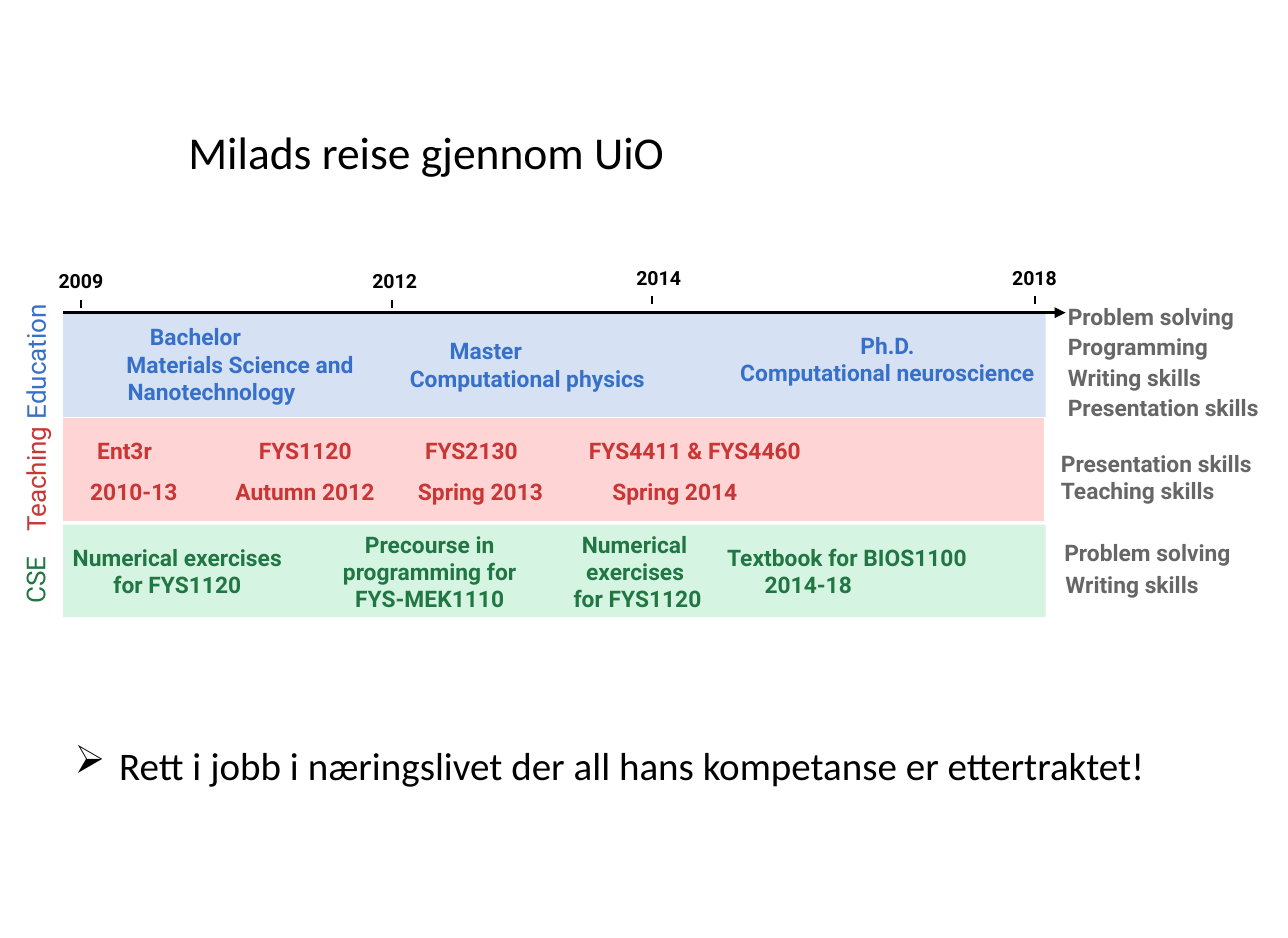
"""Build a slide with a timeline of studies, teaching and acquired skills."""
from lxml import etree
from pptx import Presentation
from pptx.dml.color import RGBColor
from pptx.enum.shapes import MSO_CONNECTOR, MSO_SHAPE
from pptx.enum.text import MSO_ANCHOR, MSO_AUTO_SIZE, PP_ALIGN
from pptx.oxml.ns import qn
from pptx.util import Inches, Pt

STRAIGHT, RECTANGLE = MSO_CONNECTOR.STRAIGHT, MSO_SHAPE.RECTANGLE
LEFT, CENTER = PP_ALIGN.LEFT, PP_ALIGN.CENTER
BOTTOM, MIDDLE = MSO_ANCHOR.BOTTOM, MSO_ANCHOR.MIDDLE
FIT = MSO_AUTO_SIZE.SHAPE_TO_FIT_TEXT
NO_STYLE = "{2D5ABB26-0587-4C30-8999-92F81FD0307C}"

THEME = {
    "colors": {"black": "000000", "education": "3670C8", "teaching": "C83636",
               "cse": "217744", "skills": "666666"},
    "bands": {"education": "D6E2F4", "teaching": "FFD4D4", "cse": "D6F4E2"},
    "label_font": "Roboto", "heading_font": "Calibri",
    "title": 28, "bullet": 24, "side": 16, "body": 14, "year": 12,
}

TITLE = ("Milads reise gjennom UiO", (1.51, 1.01, 4.31, 0.57))
CONCLUSION = ("Rett i jobb i næringslivet der all hans kompetanse er ettertraktet!",
              (0.54, 6.28, 9.43, 0.5))
BAND_LEFT, BAND_WIDTH, AXIS_Y, AXIS_END = 0.54, 8.39, 2.67, 9.1
BANDS = [("cse", 4.48, 0.79), ("education", AXIS_Y, 0.89)]
YEARS = [("2009", (0.5, 2.3, 0.51, 0.2), LEFT, 0.69),
         ("2012", (3.18, 2.3, 0.42, 0.2), LEFT, 3.35),
         ("2014", (5.35, 2.27, 0.55, 0.2), CENTER, 5.57),
         ("2018", (8.56, 2.27, 0.55, 0.2), CENTER, 8.84)]
TICK_OFFSET, TICK_HEIGHT = 0.26, 0.07
SIDE_LABELS = [("Education", "education", (-0.31, 2.84, 1.23, 0.27)),
               ("Teaching", "teaching", (-0.45, 3.66, 1.51, 0.27)),
               ("CSE", "cse", (0.07, 4.8, 0.46, 0.27))]

# Each entry: colour, box, alignment, line spacing, (text, margin, indent) paragraphs
ENTRIES = [
    ("education", (0.99, 2.76, 2.51, 0.71), LEFT, 1,
     [("Bachelor", 0.01, 0.28), ("Materials Science and", 0.01, 0.08),
      ("Nanotechnology", 0.1, 0)]),
    ("education", (3.49, 2.88, 2.21, 0.47), LEFT, 1,
     [("Master Computational physics", 0.01, 0.34)]),
    ("education", (6.23, 2.83, 2.7, 0.47), CENTER, 1,
     [("Ph.D.", 0, 0), ("Computational neuroscience", 0, 0)]),
    ("cse", (0.5, 4.64, 2.02, 0.47), CENTER, 1,
     [("Numerical exercises for FYS1120", 0.01, 0)]),
    ("cse", (2.82, 4.53, 1.69, 0.71), CENTER, 1,
     [("Precourse in programming for FYS-MEK1110", 0.01, 0)]),
    ("cse", (4.71, 4.53, 1.42, 0.71), CENTER, 1,
     [("Numerical exercises", 0.01, -0.01), ("for FYS1120", 0.01, 0.04)]),
    ("cse", (6.2, 4.64, 2.3, 0.47), LEFT, 1,
     [("Textbook for BIOS1100 2014-18", 0.33, -0.32)]),
    ("skills", (9.11, 2.56, 2.14, 1.05), LEFT, 1.11,
     [("Problem solving", 0.01, 0), ("Programming", 0.01, 0),
      ("Writing skills", 0.01, 0), ("Presentation skills", 0.01, 0)]),
    ("skills", (9.05, 3.84, 2.25, 0.47), LEFT, 1,
     [("Presentation skills", 0.01, 0), ("Teaching skills", 0.01, 0)]),
    ("skills", (9.08, 4.56, 2.14, 0.55), LEFT, 1.17,
     [("Problem solving", 0.01, 0), ("Writing skills", 0.02, 0)]),
]

TABLE_TOP = 3.57
COLUMNS = [1.28, 1.54, 1.32, 2.32, 1.92]
ROWS = [
    (0.4, BOTTOM, Pt(7.5), [("Ent3r", 0.29), ("FYS1120", 0.39), ("FYS2130", 0.27),
                            ("FYS4411 & FYS4460", 0.35), ("", 0)]),
    (0.48, MIDDLE, 1, [("2010-13", 0.23), ("Autumn 2012", 0.19), ("Spring 2013", 0.21),
                       ("Spring 2014", 0.55), ("", 0)]),
]


def rgb(name):
    """Return the theme colour with this name."""
    return RGBColor.from_string(THEME["colors"][name])


def style(p, size, color="black", font="label_font", bold=True, margin=0, indent=0):
    """Set the indents and font of a paragraph."""
    pPr = p._p.get_or_add_pPr()
    pPr.set("marL", str(Inches(margin)))
    pPr.set("indent", str(Inches(indent)))
    p.font.name, p.font.size = THEME[font], Pt(THEME[size])
    p.font.bold, p.font.color.rgb = bold, rgb(color)


def add_label(slide, box, paragraphs, size, color="black", align=LEFT, spacing=1, bold=True):
    """Add a text box without insets and return it."""
    sp = slide.shapes.add_textbox(*map(Inches, box))
    tf = sp.text_frame
    tf.word_wrap = True
    tf.margin_left = tf.margin_right = tf.margin_top = tf.margin_bottom = 0
    for i, (text, margin, indent) in enumerate(paragraphs):
        p = tf.add_paragraph() if i else tf.paragraphs[0]
        p.text, p.alignment, p.line_spacing = text, align, spacing
        style(p, size, color, bold=bold, margin=margin, indent=indent)
    return sp


def add_heading(slide, text, box, size, bullet=None):
    """Add an unwrapped line of large text, with an optional bullet."""
    tf = slide.shapes.add_textbox(*map(Inches, box)).text_frame
    tf.word_wrap, tf.auto_size = False, FIT
    p = tf.paragraphs[0]
    p.text = text
    hang = 0.38 if bullet else 0
    if bullet:
        etree.SubElement(p._p.get_or_add_pPr(), qn("a:buChar")).set("char", bullet)
    style(p, size, font="heading_font", bold=False, margin=hang, indent=-hang)


def add_line(slide, x1, y1, x2, y2, width, arrow=False):
    """Add a black line, with an optional arrowhead at its end."""
    line = slide.shapes.add_connector(STRAIGHT, *map(Inches, (x1, y1, x2, y2)))
    line.line.color.rgb, line.line.width = rgb("black"), Pt(width)
    if arrow:
        etree.SubElement(line.line._get_or_add_ln(), qn("a:tailEnd")).set("type", "triangle")
    etree.SubElement(line._element.spPr, qn("a:effectLst"))


def add_band(slide, name, top, height):
    """Add the coloured background of a timeline row."""
    sp = slide.shapes.add_shape(
        RECTANGLE, *map(Inches, (BAND_LEFT, top, BAND_WIDTH, height)))
    sp.shadow.inherit = False
    sp.fill.solid()
    sp.fill.fore_color.rgb = RGBColor.from_string(THEME["bands"][name])
    sp.line.fill.background()


def add_teaching_table(slide):
    """Add the table of courses taught."""
    height = sum(row[0] for row in ROWS)
    table = slide.shapes.add_table(
        len(ROWS), len(COLUMNS),
        *map(Inches, (BAND_LEFT, TABLE_TOP, BAND_WIDTH, height))).table
    table.first_row = table.horz_banding = False
    table._tbl.tblPr.find(qn("a:tableStyleId")).text = NO_STYLE
    for column, width in zip(table.columns, COLUMNS):
        column.width = Inches(width)
    for row, (height, anchor, spacing, cells) in zip(table.rows, ROWS):
        row.height = Inches(height)
        for cell, (text, margin) in zip(row.cells, cells):
            cell.margin_left = cell.margin_right = cell.margin_top = cell.margin_bottom = 0
            cell.vertical_anchor = anchor
            cell.fill.solid()
            cell.fill.fore_color.rgb = RGBColor.from_string(THEME["bands"]["teaching"])
            p = cell.text_frame.paragraphs[0]
            p.text, p.line_spacing = text, spacing
            style(p, "body", "teaching", margin=margin)


def main():
    """Assemble and save the slide."""
    prs = Presentation()
    prs.slide_width, prs.slide_height = Inches(11), Inches(8.01)
    slide = prs.slides.add_slide(prs.slide_layouts[6])
    for band in BANDS:
        add_band(slide, *band)
    for year, box, align, x in YEARS:
        add_label(slide, box, [(year, 0, 0)], "year", align=align)
        top = box[1] + TICK_OFFSET
        add_line(slide, x, top, x, top + TICK_HEIGHT, 1.44)
    for text, color, box in SIDE_LABELS:
        add_label(slide, box, [(text, 0.01, 0)], "side", color, bold=False).rotation = 270
    for color, box, align, spacing, paragraphs in ENTRIES:
        add_label(slide, box, paragraphs, "body", color, align, spacing)
    add_teaching_table(slide)
    add_line(slide, BAND_LEFT, AXIS_Y, AXIS_END, AXIS_Y, 2.25, arrow=True)
    add_heading(slide, *CONCLUSION, "bullet", "➢")
    add_heading(slide, *TITLE, "title")
    prs.save("out.pptx")


if __name__ == "__main__":
    main()
